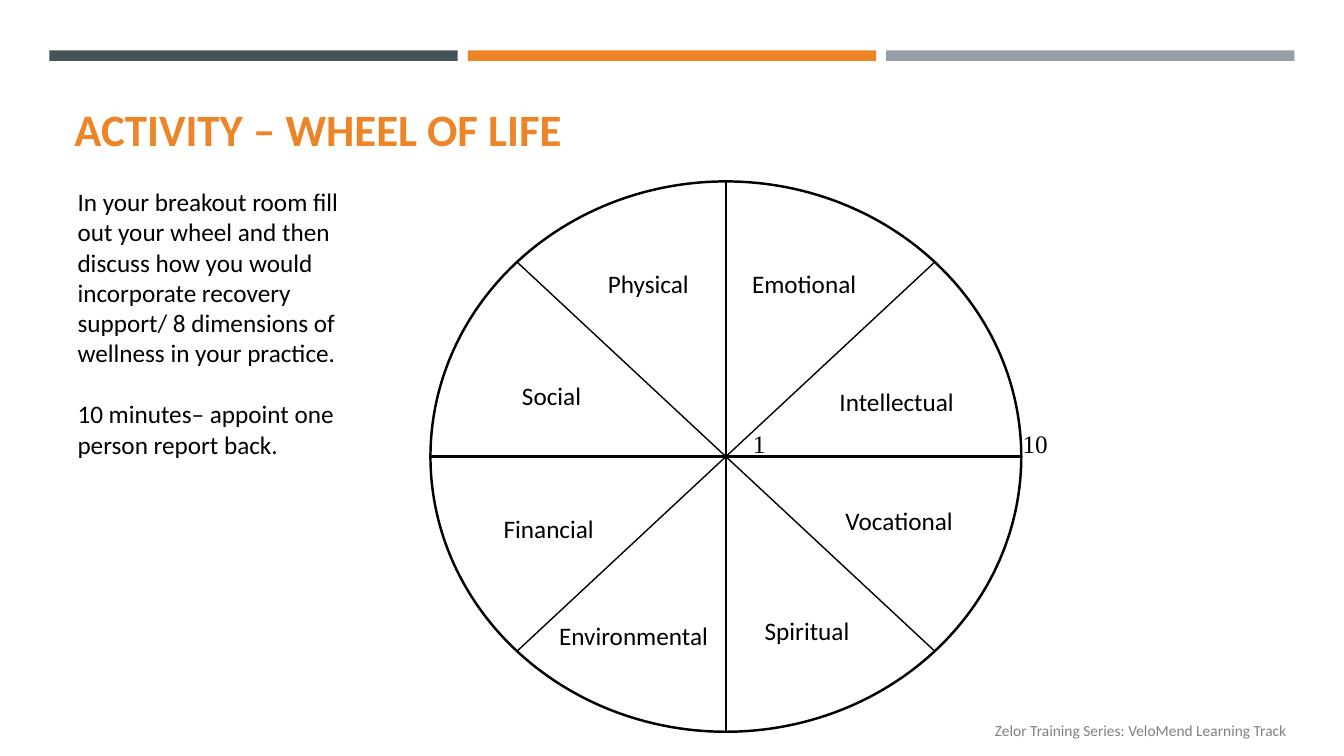
from math import sqrt

from lxml.etree import SubElement
from pptx import Presentation
from pptx.dml.color import RGBColor
from pptx.enum.shapes import MSO_CONNECTOR, MSO_SHAPE
from pptx.enum.text import MSO_ANCHOR, PP_ALIGN
from pptx.oxml.ns import qn
from pptx.util import Inches, Pt

THEME = {
    "slate": RGBColor.from_string("465359"),
    "orange": RGBColor.from_string("ED8428"),
    "silver": RGBColor.from_string("969FA7"),
    "black": RGBColor.from_string("000000"),
    "grey": RGBColor.from_string("808080"),
    "title": Pt(32), "body": Pt(18), "footer": Pt(11),
    "rim": Pt(1.75), "spoke": Pt(1),
    "sans": "Calibri", "serif": "Times New Roman",
}

prs = Presentation()
prs.slide_width, prs.slide_height = Inches(13.33), Inches(7.5)
s = prs.slides.add_slide(prs.slide_layouts[6])


def place(left, top, width, height):
    """Turn percentages of the slide's size into lengths."""
    w, h = prs.slide_width, prs.slide_height
    return [int(share * side / 100)
            for share, side in zip((left, top, width, height), (w, h, w, h))]


def add_text(box, paragraphs, size, color="black", font="sans", bold=False,
             align=PP_ALIGN.LEFT, anchor=MSO_ANCHOR.TOP, gap=0):
    tf = s.shapes.add_textbox(*place(*box)).text_frame
    tf.word_wrap, tf.vertical_anchor = True, anchor
    style = {"name": THEME[font], "size": THEME[size], "bold": bold}
    for i, text in enumerate(paragraphs):
        p = tf.add_paragraph() if i else tf.paragraphs[0]
        p.alignment = align
        if i:
            p.space_before = Pt(gap)
        r = p.add_run()
        r.text = text
        for key, value in style.items():
            setattr(r.font, key, value)
        r.font.color.rgb = THEME[color]


# Header bars
for i, color in enumerate(("slate", "orange", "silver")):
    bar = s.shapes.add_shape(MSO_SHAPE.RECTANGLE,
                             *place(3.68 + 31.13 * i, 6.67, 30.38, 1.4))
    bar.shadow.inherit = False
    bar.fill.solid()
    bar.fill.fore_color.rgb = THEME[color]
    bar.line.fill.background()

add_text((68.87, 94.67, 27.61, 3.87),
         ["Zelor Training Series: VeloMend Learning Track"],
         "footer", "grey", align=PP_ALIGN.RIGHT)
add_text((4.8, 10.13, 90.47, 11.07), ["ACTIVITY – WHEEL OF LIFE"],
         "title", "orange", bold=True, anchor=MSO_ANCHOR.BOTTOM)

# Wheel with its upright cross
wheel = s.shapes.add_shape(MSO_SHAPE.FLOWCHART_OR,
                           *place(32.03, 24, 43.96, 72.8))
wheel.shadow.inherit = False
wheel.fill.background()
wheel.line.color.rgb, wheel.line.width = THEME["black"], THEME["rim"]

# Diagonal spokes from rim to rim
cx, cy = wheel.left + wheel.width // 2, wheel.top + wheel.height // 2
dx, dy = (int(side / 2 / sqrt(2)) for side in (wheel.width, wheel.height))
for rise in (dy, -dy):
    spoke = s.shapes.add_connector(MSO_CONNECTOR.STRAIGHT,
                                   cx - dx, cy - rise, cx + dx, cy + rise)
    spoke.line.color.rgb, spoke.line.width = THEME["black"], THEME["spoke"]
    SubElement(spoke._element.spPr, qn("a:effectLst"))

# Labels: text, centre, top, font
LABEL_W, LABEL_H = 13.88, 5.33
for text, center, top, font in (
    ("Physical", 48.24, 34.8, "sans"),
    ("Emotional", 59.83, 34.8, "sans"),
    ("Intellectual", 66.72, 50.4, "sans"),
    ("Vocational", 66.9, 66.13, "sans"),
    ("Spiritual", 60.05, 80.8, "sans"),
    ("Environmental", 47.14, 81.33, "sans"),
    ("Financial", 40.83, 67.2, "sans"),
    ("Social", 41.04, 49.6, "sans"),
    ("1", 56.49, 56, "serif"),
    ("10", 77.03, 56, "serif"),
):
    add_text((center - LABEL_W / 2, top, LABEL_W, LABEL_H), [text],
             "body", font=font, align=PP_ALIGN.CENTER)

add_text((5.03, 24, 23.11, 37.73), [
    "In your breakout room fill out your wheel and then discuss how you would "
    "incorporate recovery support/ 8 dimensions of wellness in your practice.",
    "10 minutes– appoint one person report back.",
], "body", gap=22)

prs.save("out.pptx")
